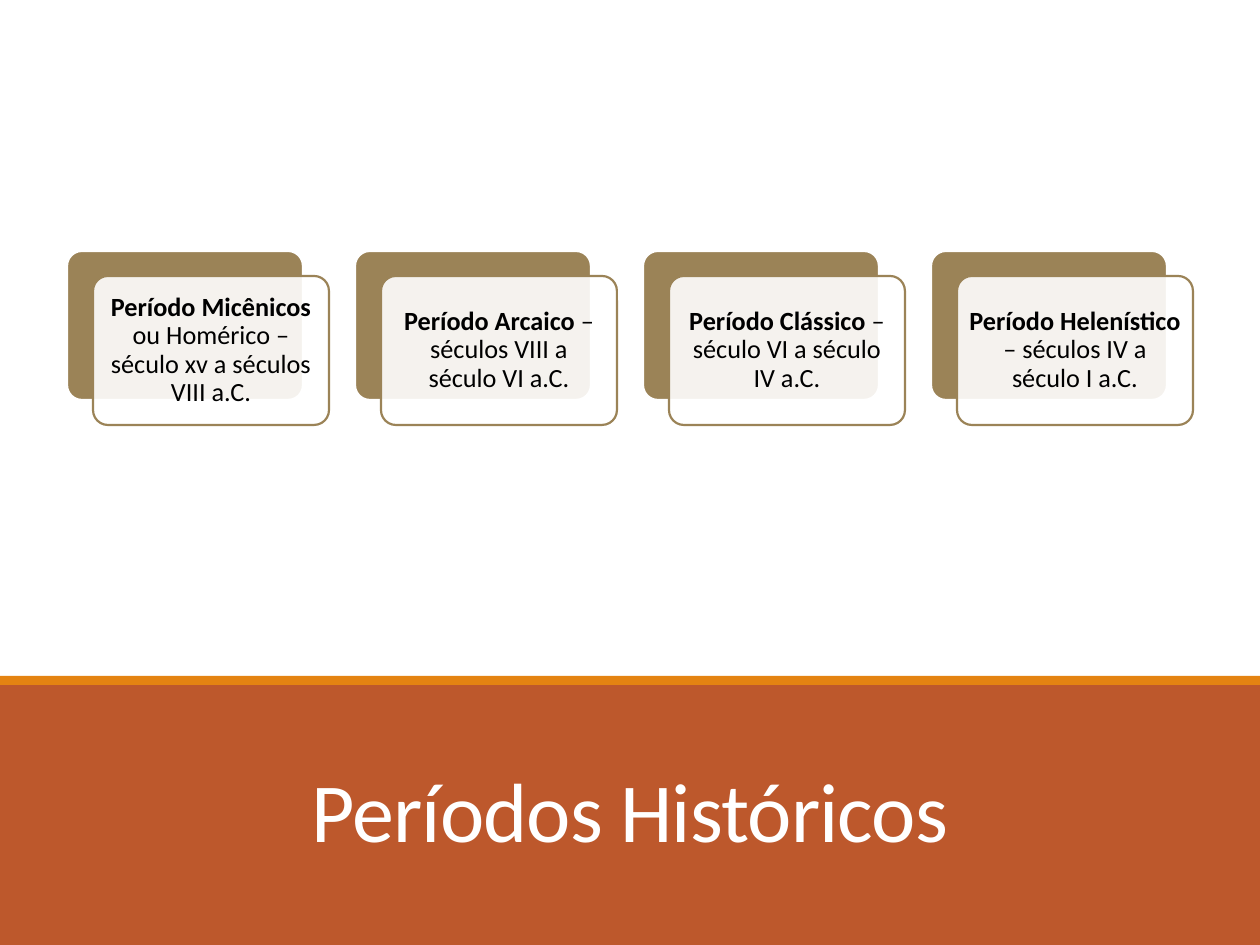
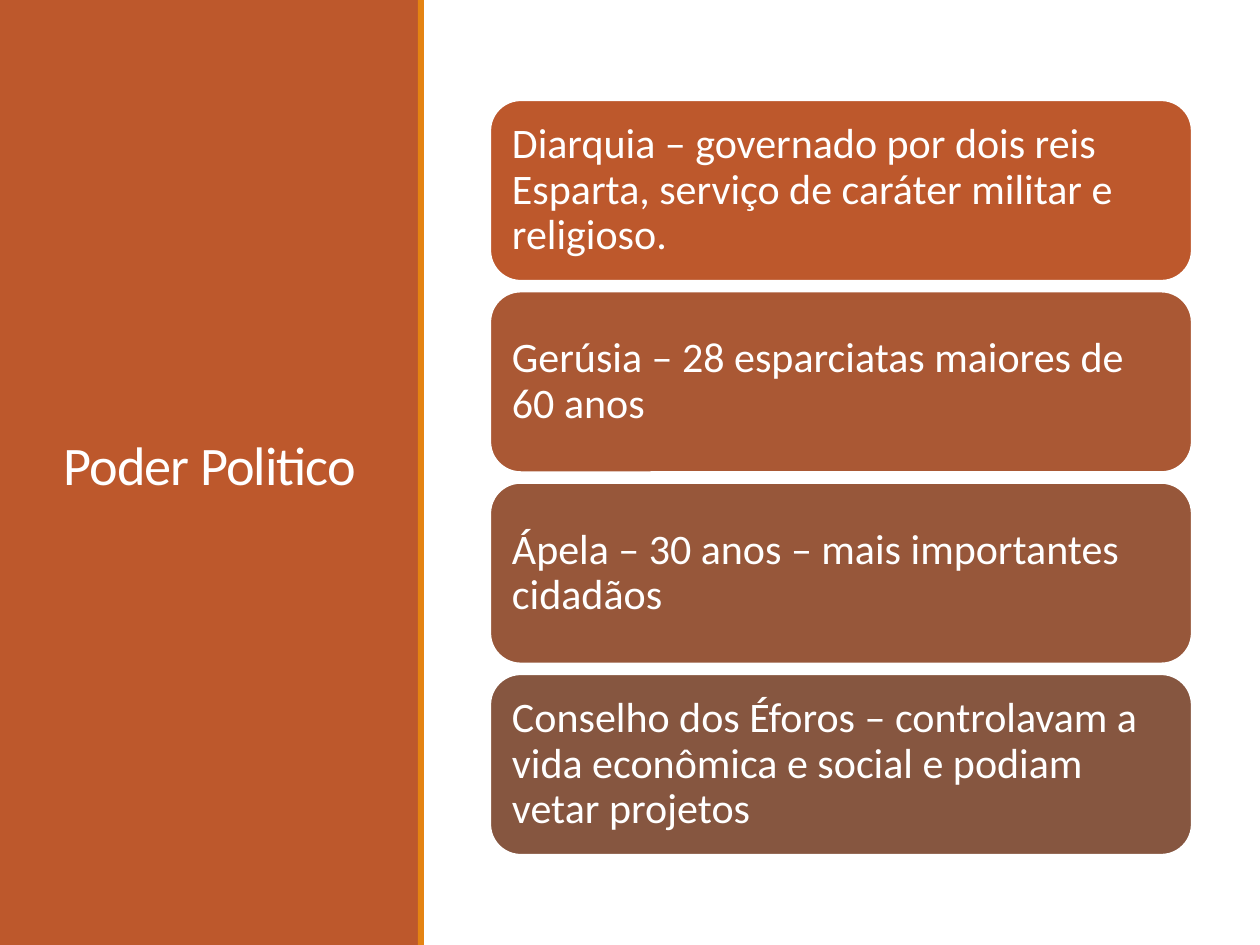
from lxml import etree
from pptx import Presentation
from pptx import util as u
from pptx.dml.color import RGBColor
from pptx.enum import shapes, text
from pptx.oxml.ns import qn

FONT = "Calibri"
WHITE, BLACK = "FFFFFF", "000000"
RUST, AMBER, SAND = "BD582C", "E48312", "9B8357"
BORDER = 1.25

# Boxes are (left, top, width, height) in px, 126 px to the inch.
PERIODS = {
    "title": "Períodos Históricos",
    "title_box": (110, 724, 1040, 142),
    "title_size": 48,
    "title_anchor": text.MSO_ANCHOR.BOTTOM,
    "title_align": text.PP_ALIGN.CENTER,
    "band": (0, 683, 1260, 262),
    "accent": (0, 676, 1260, 9),
    "cards": [
        ("Período Micênicos ", "ou Homérico – século xv a séculos VIII a.C."),
        ("Período Arcaico ", "– séculos VIII a século VI a.C."),
        ("Período Clássico ", "– século VI a século IV a.C."),
        ("Período Helenístico ", "– séculos IV a século I a.C."),
    ],
}
POWER = {
    "title": "Poder Politico",
    "title_box": (51, 72, 319, 794),
    "title_size": 31,
    "title_anchor": text.MSO_ANCHOR.MIDDLE,
    "title_align": text.PP_ALIGN.LEFT,
    "band": (0, 0, 418, 945),
    "accent": (418, 0, 6, 945),
    "bars": [
        (RUST, "Diarquia – governado por dois reis Esparta, serviço de caráter militar e religioso."),
        ("AA5834", "Gerúsia – 28 esparciatas maiores de 60 anos"),
        ("97573A", "Ápela – 30 anos – mais importantes cidadãos"),
        ("865640", "Conselho dos Éforos – controlavam a vida econômica e social e podiam vetar projetos"),
    ],
}
CARD_BOX, CARD_PITCH, FRONT_SHIFT = (67, 251, 236, 149), 288, (26, 25)
BAR_BOX, LAST_BAR_TOP = (490, 100, 702, 181), 674


def px(n):
    return u.Emu(round(n * 914400 / 126))


def rgb(value):
    return RGBColor.from_string(value)


def add_block(slide, box, fill, line=None, corner=None, opacity=None):
    """Rectangle, rounded when a corner ratio is given; opacity in percent."""
    preset = shapes.MSO_SHAPE.ROUNDED_RECTANGLE if corner else shapes.MSO_SHAPE.RECTANGLE
    block = slide.shapes.add_shape(preset, *map(px, box))
    block.shadow.inherit = False
    if corner:
        block.adjustments[0] = corner
    block.fill.solid()
    block.fill.fore_color.rgb = rgb(fill)
    if opacity:
        color = block.fill._xPr.find(qn("a:solidFill"))[0]
        etree.SubElement(color, qn("a:alpha"), val=str(opacity * 1000))
    if line:
        block.line.color.rgb = rgb(line)
        block.line.width = u.Pt(BORDER)
    else:
        block.line.fill.background()
    return block


def write(shape, runs, size, color, align, anchor, spacing, inset=None, tracking=None):
    """Fill the shape with one paragraph of (text, bold) runs."""
    frame = shape.text_frame
    frame.word_wrap = True
    frame.vertical_anchor = anchor
    if inset is not None:
        frame.margin_left = frame.margin_right = px(inset)
        frame.margin_top = frame.margin_bottom = px(inset)
    paragraph = frame.paragraphs[0]
    paragraph.alignment = align
    paragraph.line_spacing = spacing
    for words, bold in runs:
        run = paragraph.add_run()
        run.text = words
        run.font.name = FONT
        run.font.size = u.Pt(size)
        run.font.bold = bold
        run.font.color.rgb = rgb(color)
        if tracking:
            run.font._element.set("spc", str(round(tracking * 100)))


def add_titled_slide(deck, content):
    slide = deck.slides.add_slide(deck.slide_layouts[6])
    add_block(slide, content["band"], RUST)
    title = slide.shapes.add_textbox(*map(px, content["title_box"]))
    write(title, [(content["title"], False)], content["title_size"], WHITE,
          content["title_align"], content["title_anchor"], 0.85, tracking=-0.5)
    add_block(slide, content["accent"], AMBER)
    return slide


def add_period_cards(slide, cards):
    left, top, width, height = CARD_BOX
    dx, dy = FRONT_SHIFT
    for i, (period, dates) in enumerate(cards):
        x = left + i * CARD_PITCH
        add_block(slide, (x, top, width, height), SAND, WHITE, 0.1)
        front = add_block(slide, (x + dx, top + dy, width, height), WHITE, SAND, 0.1, 90)
        write(front, [(period, True), (dates, False)], 15, BLACK,
              text.PP_ALIGN.CENTER, text.MSO_ANCHOR.MIDDLE, 0.9, inset=8)


def add_power_bars(slide, bars):
    left, top, width, height = BAR_BOX
    pitch = (LAST_BAR_TOP - top) / (len(bars) - 1)
    for i, (fill, body) in enumerate(bars):
        bar = add_block(slide, (left, top + i * pitch, width, height), fill, WHITE, 0.17)
        write(bar, [(body, False)], 24, WHITE,
              text.PP_ALIGN.LEFT, text.MSO_ANCHOR.MIDDLE, 0.9, inset=13)


def main():
    deck = Presentation()
    deck.slide_width, deck.slide_height = px(1260), px(945)
    add_period_cards(add_titled_slide(deck, PERIODS), PERIODS["cards"])
    add_power_bars(add_titled_slide(deck, POWER), POWER["bars"])
    deck.save("out.pptx")


if __name__ == "__main__":
    main()
